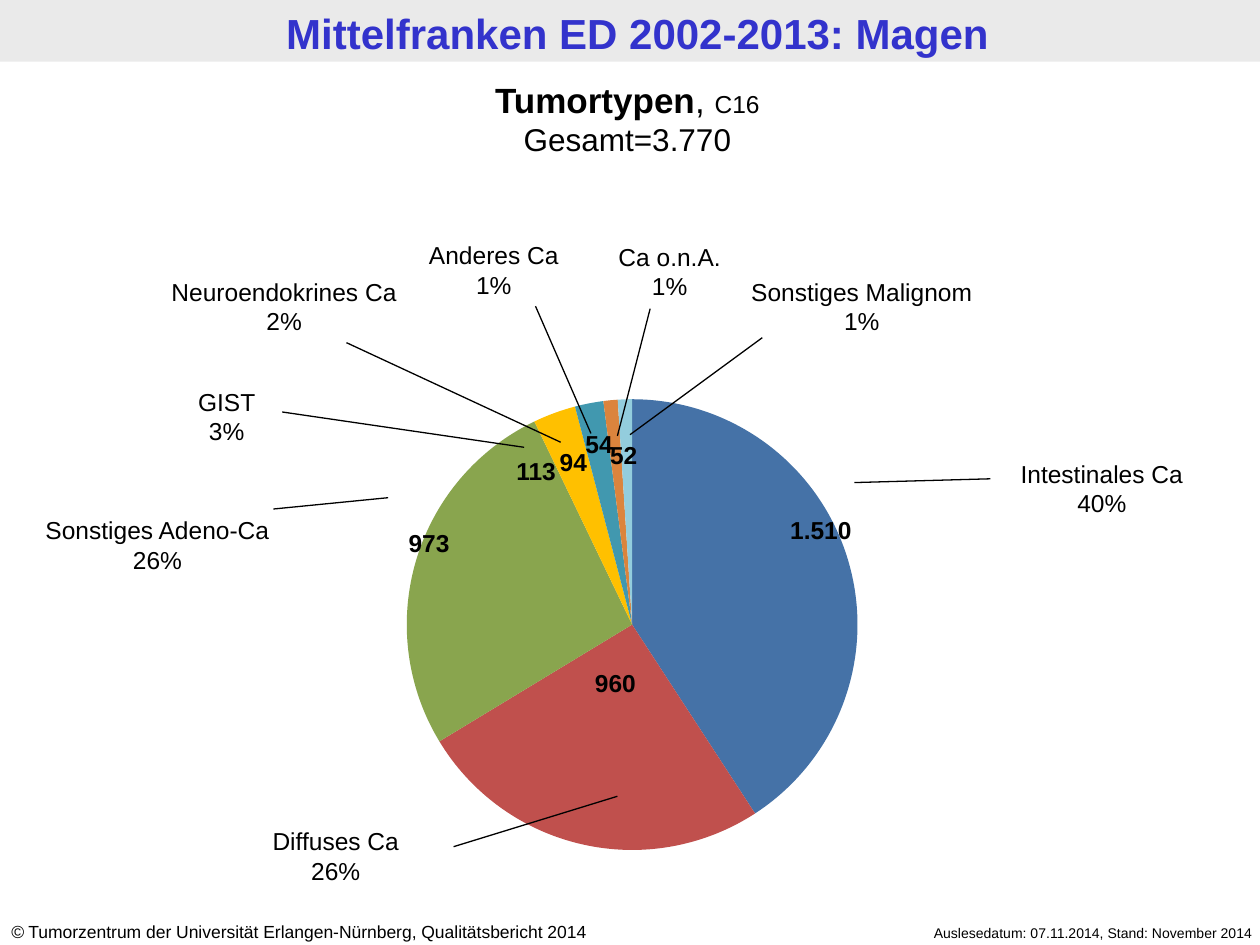
from pptx import Presentation
from pptx import util as u
from pptx.chart import data
from pptx.dml import color
from pptx.enum import chart as charts, shapes, text
from pptx.oxml import parse_xml
from pptx.oxml import ns

FONT = "Arial"
MID, LEFT, RIGHT = text.PP_ALIGN.CENTER, text.PP_ALIGN.LEFT, text.PP_ALIGN.RIGHT

# Tumour types: value, slice colour
SLICES = [(40, "4572A7"), (25, "C0504D"), (26, "89A54E"), (3, "FFC000"),
          (2, "4198AF"), (1, "DB843D"), (1, "93CDDD"), (0, "FCD5B5"),
          (0, "BFBFBF")]

# Label, share, box, leader from slice to label
LABELS = [
    ("Sonstiges Malignom", "1%", (5.79, 2.15, 2.1), (5, 3.45, 6.05, 2.68)),
    ("Sonstiges Adeno-Ca", "26%", (0.12, 4.04, 2.26), (3.08, 3.95, 2.17, 4.04)),
    ("Ca o.n.A.", "1%", (4.21, 1.87, 2.21), (4.9, 3.46, 5.16, 2.45)),
    ("Diffuses Ca", "26%", (1.57, 6.51, 2.19), (4.9, 6.32, 3.6, 6.72)),
    ("Intestinales Ca", "40%", (7.68, 3.59, 2.13), (6.78, 3.83, 7.86, 3.8)),
    ("Neuroendokrines Ca", "2%", (0.75, 2.15, 3.01), (4.45, 3.51, 2.75, 2.72)),
    ("GIST", "3%", (0.75, 3.02, 2.1), (4.16, 3.55, 2.24, 3.27)),
    ("Anderes Ca", "1%", (2.87, 1.86, 2.1), (4.69, 3.44, 4.25, 2.43)),
]

# Count, left, top, width
COUNTS = [("973", 2.99, 4.14, 0.83), ("960", 4.47, 5.25, 0.83),
          ("1.510", 6.1, 4.04, 0.83), ("94", 4.29, 3.5, 0.52),
          ("113", 3.98, 3.57, 0.55), ("54", 4.51, 3.36, 0.49),
          ("52", 4.74, 3.44, 0.42)]


def rgb(code):
    return color.RGBColor.from_string(code)


def inch(*nums):
    return [u.Inches(n) for n in nums]


def write(frame, paras, size=14, bold=False, align=MID, code="000000", side=0.1):
    """Each paragraph is a list of (text, overrides) runs."""
    frame.word_wrap = True
    frame.auto_size = text.MSO_AUTO_SIZE.NONE
    frame.vertical_anchor = text.MSO_ANCHOR.TOP
    frame.margin_left = frame.margin_right = u.Inches(side)
    frame.margin_top = frame.margin_bottom = u.Inches(0.05)
    for i, runs in enumerate(paras):
        para = frame.add_paragraph() if i else frame.paragraphs[0]
        para.alignment = align
        for words, over in runs:
            run = para.add_run()
            run.text = words
            font = run.font
            font.name = FONT
            font.size = u.Pt(over.get("size", size))
            font.bold = over.get("bold", bold)
            font.italic = over.get("italic", False)
            font.color.rgb = rgb(code)


def put(slide, box, paras, **form):
    write(slide.shapes.add_textbox(*inch(*box)).text_frame, paras, **form)


def head(slide, box):
    # Grey band, behind the title
    band = slide.shapes.add_shape(shapes.MSO_SHAPE.RECTANGLE, *inch(*box))
    band.shadow.inherit = False
    band.fill.solid()
    band.fill.fore_color.rgb = rgb("EAEAEA")
    band.line.fill.background()
    slide.shapes._spTree.insert(2, band._element)
    # Title
    x, y, w, h = box
    title = slide.shapes.title
    title.left, title.top, title.width, title.height = inch(x + 0.06, y + 0.01, w, h)
    write(title.text_frame, [[("Mittelfranken ED 2002-2013: Magen", {})]],
          size=24, bold=True, code="3333CC")


def intro(slide, box):
    put(slide, box, [
        [("Tumortypen", {"bold": True}), (", ", {}), ("C16", {"size": 14})],
        [("Gesamt=3.770", {"size": 18})]], size=20)


def pie(slide, box):
    info = data.CategoryChartData()
    info.categories = [str(n + 1) for n in range(len(SLICES))]
    info.add_series("Series 1", [val for val, _ in SLICES])
    chart = slide.shapes.add_chart(charts.XL_CHART_TYPE.PIE, *inch(*box), info).chart
    chart.has_legend = chart.has_title = False
    chart.font.name, chart.font.size = "Calibri", u.Pt(18)
    chart.font.color.rgb = rgb("000000")
    plot = chart.plots[0]
    plot.vary_by_categories = True
    for i, (_, code) in enumerate(SLICES):
        form = plot.series[0].points[i].format
        form.fill.solid()
        form.fill.fore_color.rgb = rgb(code)
        form.line.fill.background()
    # Centre the circle in the frame
    w, h, size = box[2], box[3], 3.58
    spot = {"x": (1 - size / w) / 2, "y": (1 - size / h) / 2,
            "w": size / w, "h": size / h}
    parts = "".join(f'<c:{k} val="{v:.3f}"/>' for k, v in spot.items())
    area = chart._chartSpace.chart.plotArea
    for old in area.findall(ns.qn("c:layout")):
        area.remove(old)
    area.insert(0, parse_xml(
        f'<c:layout {ns.nsdecls("c")}><c:manualLayout><c:layoutTarget val="inner"/>'
        '<c:xMode val="edge"/><c:yMode val="edge"/>'
        f'{parts}</c:manualLayout></c:layout>'))


def lead(slide, ends):
    line = slide.shapes.add_connector(shapes.MSO_CONNECTOR.STRAIGHT, *inch(*ends))
    line.line.color.rgb = rgb("000000")
    line.line.width = u.Pt(0.75)
    line._element.spPr.append(parse_xml(f'<a:effectLst {ns.nsdecls("a")}/>'))


def notes(slide, box):
    """Type labels, counts and leaders, offset by the corner of the box."""
    x, y = box[:2]
    for name, share, (left, top, wide), _ in LABELS:
        put(slide, (x + left, y + top, wide, 0.57), [[(name, {})], [(share, {})]])
    for count, left, top, wide in COUNTS:
        put(slide, (x + left, y + top, wide, 0.34), [[(count, {})]],
            bold=True, side=0.02)
    for *_, (x1, y1, x2, y2) in LABELS:
        lead(slide, (x + x1, y + y1, x + x2, y + y2))


def foot(slide, box):
    x, y, w, h = box
    put(slide, (x + w - 3.35, y + 0.03, 3.39, 0.24),
        [[("Auslesedatum: 07.11.2014, Stand: November 2014", {})]],
        size=8, align=RIGHT)
    put(slide, (x - 0.01, y, 5.24, h),
        [[("©", {"italic": True}),
          (" Tumorzentrum der Universität Erlangen-Nürnberg, "
           "Qualitätsbericht 2014", {})]], size=10, align=LEFT)


def main():
    deck = Presentation()
    deck.slide_width, deck.slide_height = inch(10, 7.5)
    slide = deck.slides.add_slide(deck.slide_layouts[5])
    head(slide, (0, 0, 10, 0.49))
    foot(slide, (0, 7.26, 10, 0.27))
    intro(slide, (-0.04, 0.57, 10.04, 0.74))
    pie(slide, (2.4, 3.03, 5.24, 3.86))
    notes(slide, (0, 0, 10, 7.5))
    deck.save("out.pptx")


if __name__ == "__main__":
    main()
